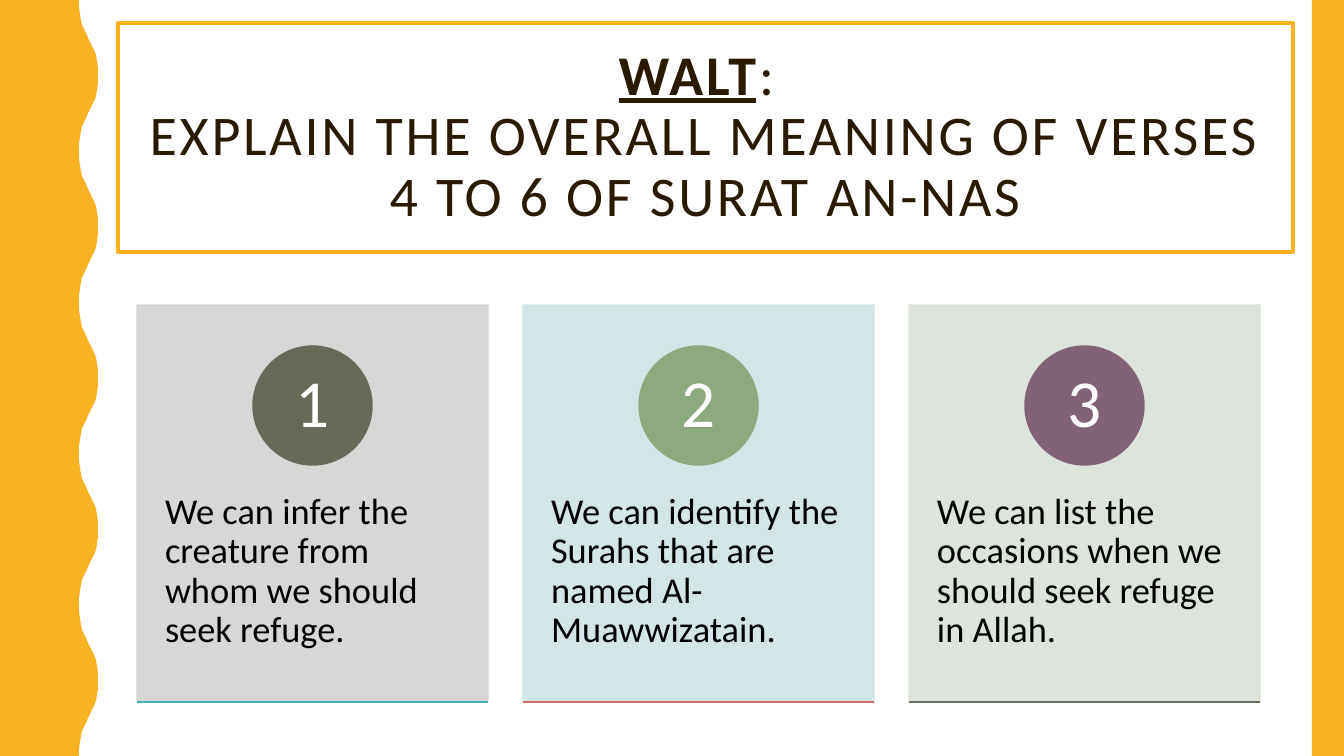
"""Build the lesson objective slide with three numbered goal cards."""
from lxml import etree
from pptx import Presentation
from pptx.dml.color import RGBColor
from pptx.enum.shapes import MSO_CONNECTOR, MSO_SHAPE
from pptx.enum.text import MSO_ANCHOR, PP_ALIGN
from pptx.oxml.ns import qn
from pptx.util import Pt

PX = 9144000 / 1008
WIDTH, HEIGHT = 1344, 756
RECTANGLE, OVAL = MSO_SHAPE.RECTANGLE, MSO_SHAPE.OVAL
STRAIGHT = MSO_CONNECTOR.STRAIGHT
CENTER, LEFT = PP_ALIGN.CENTER, PP_ALIGN.LEFT
TOP, MIDDLE = MSO_ANCHOR.TOP, MSO_ANCHOR.MIDDLE

GOLD, BROWN, WHITE, BLACK = "F8B323", "2A1A00", "FFFFFF", "000000"
WAVES = 5
HALF_WAVE = [(79, 0), (79, 7), (80, 14), (81, 20), (82, 25), (84, 29), (86, 33), (88, 38),
             (90, 42), (92, 46), (94, 50), (96, 55), (97, 61), (98, 68), (98, 76)]
CARD_LEFT, CARD_TOP, CARD_WIDTH, CARD_HEIGHT, CARD_PITCH = 137, 305, 351, 396, 386
CIRCLE = 119
GOALS = [
    ("We can infer the creature from whom we should seek refuge.", "D3D4D1", "656A59", "46B2B5"),
    ("We can identify the Surahs that are named Al-Muawwizatain.", "CFE4E5", "8CAA7E", "D36F68"),
    ("We can list the occasions when we should seek refuge in Allah.", "DAE2D8", "826276", "656A59"),
]


def color(value):
    return RGBColor.from_string(value)


def write(shape, text, size, font_color, align, anchor, inset_x, inset_y):
    frame = shape.text_frame
    frame.word_wrap = True
    frame.vertical_anchor = anchor
    frame.margin_left = frame.margin_right = int(inset_x * PX)
    frame.margin_top = frame.margin_bottom = int(inset_y * PX)
    para = frame.paragraphs[0]
    para.alignment = align
    para.line_spacing = 0.9
    para.font.name = "Calibri"
    para.font.size = Pt(size)
    para.font.color.rgb = color(font_color)
    span = para.add_run()
    span.text = text
    return para, span


deck = Presentation()
deck.slide_width, deck.slide_height = int(WIDTH * PX), int(HEIGHT * PX)
page = deck.slides.add_slide(deck.slide_layouts[6])
shapes = page.shapes

period = HEIGHT / WAVES
wave = HALF_WAVE + [(x, period - y) for x, y in reversed(HALF_WAVE[1:-1])]
edge = [(x, y + period * i) for i in range(WAVES) for x, y in wave]
outline = edge + [(HALF_WAVE[0][0], HEIGHT), (0, HEIGHT)]
builder = shapes.build_freeform(0, 0)
builder.add_line_segments([(x * PX, y * PX) for x, y in outline], close=True)
border = builder.convert_to_shape()
stripe = shapes.add_shape(RECTANGLE, *(int(v * PX) for v in (1312, 0, 32, HEIGHT)))
for band in (border, stripe):
    band.shadow.inherit = False
    band.fill.solid()
    band.fill.fore_color.rgb = color(GOLD)
    band.line.fill.background()

title = shapes.add_shape(RECTANGLE, *(int(v * PX) for v in (118, 23, 1175, 229)))
title.shadow.inherit = False
title.fill.background()
title.line.color.rgb = color(GOLD)
title.line.width = Pt(3)
para, heading = write(title, "WALT", 40, BROWN, CENTER, MIDDLE, 10, 5)
heading.font.bold = heading.font.underline = True
para.add_run().text = ": "
para.add_line_break()
para.add_run().text = "EXPLAIN THE OVERALL MEANING OF VERSES 4 TO 6 OF SURAT AN-NAS"
for span in para.runs:
    span.font.size = Pt(40)
    span.font._element.set("spc", "200")

for number, (goal, card_color, circle_color, rule_color) in enumerate(GOALS, 1):
    left = CARD_LEFT + (number - 1) * CARD_PITCH
    bottom = CARD_TOP + CARD_HEIGHT + 1
    card = shapes.add_shape(
        RECTANGLE, *(int(v * PX) for v in (left, CARD_TOP, CARD_WIDTH, CARD_HEIGHT)))
    circle = shapes.add_shape(
        OVAL, *(int(v * PX) for v in (left + (CARD_WIDTH - CIRCLE) // 2, 346, CIRCLE, CIRCLE)))
    for shape, shade in ((card, card_color), (circle, circle_color)):
        shape.shadow.inherit = False
        shape.fill.solid()
        shape.fill.fore_color.rgb = color(shade)
        shape.line.color.rgb = color(shade)
        shape.line.width = Pt(1)
    for tint in card._element.spPr.iter(qn("a:srgbClr")):
        etree.SubElement(tint, qn("a:alpha")).set("val", "90000")
    write(circle, str(number), 48, WHITE, CENTER, MIDDLE, 9, 1)

    box = shapes.add_textbox(*(int(v * PX) for v in (left, 457, CARD_WIDTH, 238)))
    write(box, goal, 26, BLACK, LEFT, TOP, 28, 36)

    rule = shapes.add_connector(
        STRAIGHT, *(int(v * PX) for v in (left, bottom, left + CARD_WIDTH, bottom)))
    rule.line.color.rgb = color(rule_color)
    rule.line.width = Pt(1)
    etree.SubElement(rule._element.spPr, qn("a:effectLst"))

deck.save("out.pptx")
